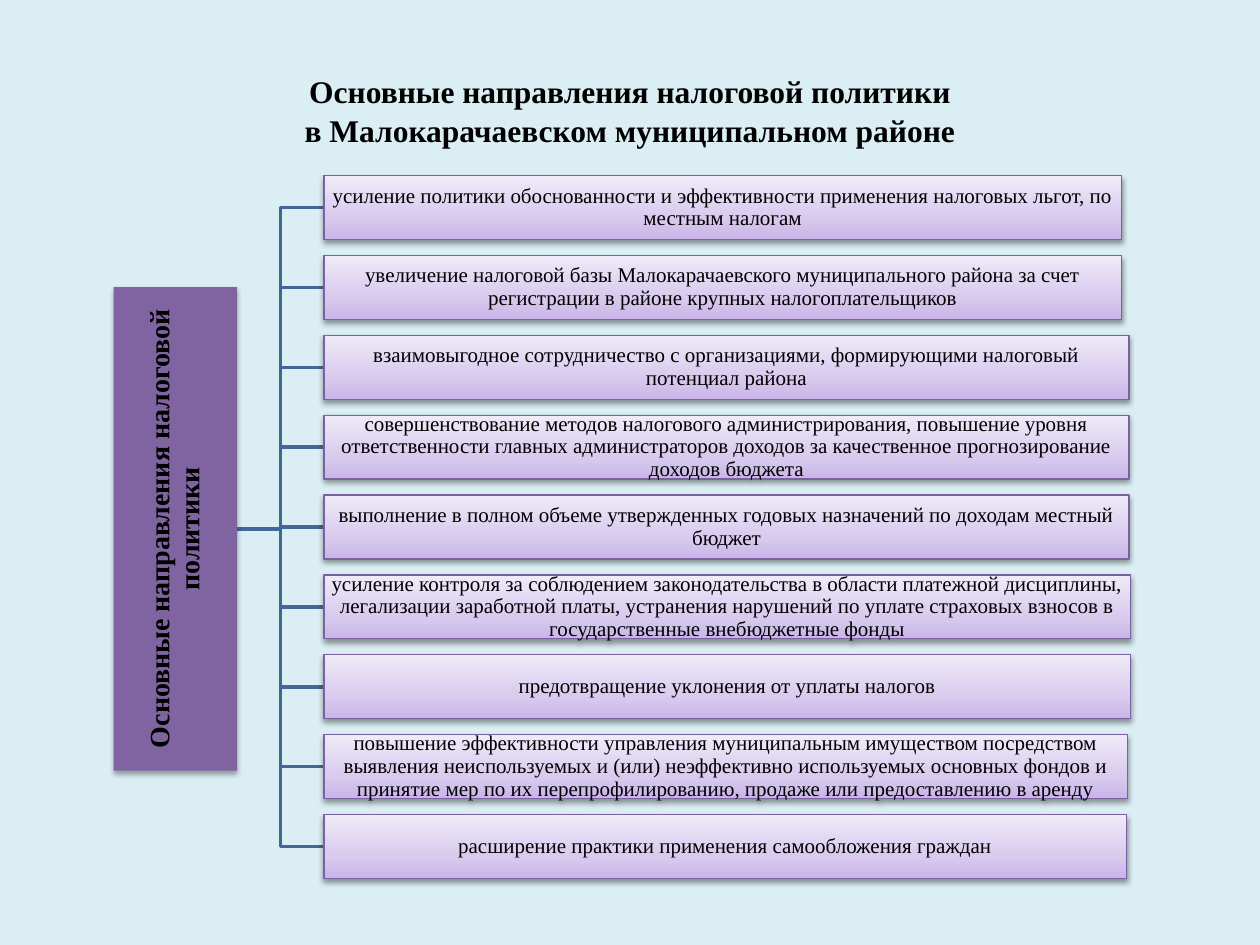
from dataclasses import dataclass

from lxml import etree
from pptx import Presentation
from pptx.dml.color import RGBColor
from pptx.enum.shapes import MSO_SHAPE as Kind
from pptx.enum.text import MSO_ANCHOR as Anchor, PP_ALIGN as Align
from pptx.oxml import parse_xml
from pptx.oxml.ns import nsdecls, qn
from pptx.shapes.autoshape import Shape
from pptx.slide import Slide
from pptx.text.text import TextFrame
from pptx.util import Cm, Pt

SKY = RGBColor(0xDB, 0xEE, 0xF4)
BLACK = RGBColor(0, 0, 0)
BLUE = RGBColor(0x3F, 0x67, 0x97)
PURPLE = RGBColor(0x80, 0x64, 0xA2)
EDGE = RGBColor(0x7D, 0x60, 0xA0)
STOPS = (
    (0, RGBColor(0xC9, 0xB5, 0xE8)),
    (35, RGBColor(0xD8, 0xCB, 0xEE)),
    (100, RGBColor(0xF0, 0xEA, 0xF9)),
)
FONT = "Times New Roman"

# Tree measures in centimetres
LEFT, TOP, HIGH, PITCH = 6.53, 3.54, 1.29, 1.61
ROOT_X, ROOT_Y, TRUNK = 4.78, 10.66, 5.66
ROOT_W, ROOT_H = 9.75, 2.49


@dataclass
class Goal:
    width: float
    text: str


TITLE = (
    "Основные направления налоговой политики",
    "в Малокарачаевском муниципальном районе",
)
GOALS = (
    Goal(16.08, "усиление политики обоснованности и эффективности применения "
         "налоговых льгот, по местным налогам"),
    Goal(16.08, "увеличение налоговой базы Малокарачаевского муниципального "
         "района за счет регистрации в районе крупных налогоплательщиков"),
    Goal(16.23, "взаимовыгодное сотрудничество с организациями, формирующими "
         "налоговый потенциал района"),
    Goal(16.23, "совершенствование методов налогового администрирования, "
         "повышение уровня ответственности главных администраторов доходов "
         "за качественное прогнозирование доходов бюджета"),
    Goal(16.23, "выполнение в полном объеме утвержденных годовых назначений "
         "по доходам местный бюджет"),
    Goal(16.26, "усиление контроля за соблюдением законодательства в области "
         "платежной дисциплины, легализации заработной платы, устранения "
         "нарушений по уплате страховых взносов в государственные "
         "внебюджетные фонды"),
    Goal(16.26, "предотвращение уклонения от уплаты налогов"),
    Goal(16.2, "повышение эффективности управления муниципальным имуществом "
         "посредством выявления неиспользуемых и (или) неэффективно "
         "используемых основных фондов и принятие мер по их "
         "перепрофилированию, продаже или предоставлению в аренду"),
    Goal(16.18, "расширение практики применения самообложения граждан"),
)


def write(frame: TextFrame, lines: tuple[str, ...], size: int,
          bold: bool, space: float) -> None:
    frame.word_wrap = True
    for i, line in enumerate(lines):
        par = frame.paragraphs[0] if i == 0 else frame.add_paragraph()
        par.alignment = Align.CENTER
        par.line_spacing = space
        run = par.add_run()
        run.text = line
        font = run.font
        font.name, font.size, font.bold = FONT, Pt(size), bold
        font.color.rgb = BLACK


def shade(shape: Shape, alpha: int, dist: float) -> None:
    """Cast a soft shadow straight down."""
    shape.shadow.inherit = False
    effects = shape._element.spPr.find(qn("a:effectLst"))
    effects.append(parse_xml(
        f'<a:outerShdw {nsdecls("a")} blurRad="{Pt(3.1)}" dist="{Pt(dist)}" '
        f'dir="5400000" rotWithShape="0"><a:srgbClr val="{BLACK}">'
        f'<a:alpha val="{alpha * 1000}"/></a:srgbClr></a:outerShdw>'))


def blend(shape: Shape) -> None:
    """Fill with the three stops, from bottom to top."""
    shape.fill.gradient()
    grad = shape._element.spPr.find(qn("a:gradFill"))
    stops = grad.find(qn("a:gsLst"))
    for old in list(stops):
        stops.remove(old)
    for pos, color in STOPS:
        stop = etree.SubElement(stops, qn("a:gs"), pos=str(pos * 1000))
        etree.SubElement(stop, qn("a:srgbClr"), val=str(color))
    grad.find(qn("a:lin")).set("ang", "16200000")


def add_box(slide: Slide, x: float, y: float, wide: float, high: float,
            text: str, size: int, bold: bool = False) -> Shape:
    box = slide.shapes.add_shape(Kind.RECTANGLE, Cm(x), Cm(y), Cm(wide), Cm(high))
    frame = box.text_frame
    frame.margin_left = frame.margin_right = Cm(0.02)
    frame.margin_top = frame.margin_bottom = Cm(0.02)
    frame.vertical_anchor = Anchor.MIDDLE
    write(frame, (text,), size, bold, 0.9)
    return box


def add_branch(slide: Slide, y: float) -> None:
    pen = slide.shapes.build_freeform(Cm(ROOT_X), Cm(ROOT_Y))
    bends = ((TRUNK, ROOT_Y), (TRUNK, y), (LEFT, y))
    pen.add_line_segments([(Cm(a), Cm(b)) for a, b in bends], close=False)
    branch = pen.convert_to_shape()
    branch.shadow.inherit = False
    branch.fill.background()
    branch.line.color.rgb = BLUE
    branch.line.width = Pt(2)


def add_root(slide: Slide) -> None:
    x = ROOT_X - (ROOT_W + ROOT_H) / 2
    root = add_box(slide, x, ROOT_Y - ROOT_H / 2, ROOT_W, ROOT_H, TITLE[0], 16, True)
    root.rotation = 270
    root.fill.solid()
    root.fill.fore_color.rgb = PURPLE
    root.line.fill.background()
    shade(root, 35, 1.8)


def add_goal(slide: Slide, goal: Goal, y: float) -> None:
    box = add_box(slide, LEFT, y, goal.width, HIGH, goal.text, 12)
    blend(box)
    box.line.color.rgb = EDGE
    box.line.width = Pt(0.75)
    shade(box, 38, 1.6)


def main() -> None:
    deck = Presentation()
    deck.slide_width, deck.slide_height = Cm(25.4), Cm(19.05)
    slide = deck.slides.add_slide(deck.slide_layouts[6])
    back = slide.background.fill
    back.solid()
    back.fore_color.rgb = SKY

    title = slide.shapes.add_textbox(Cm(1.27), Cm(1.32), Cm(22.86), Cm(1.9))
    write(title.text_frame, TITLE, 18, True, 1)
    title.text_frame.paragraphs[1].space_before = Pt(1)

    tops = [TOP + i * PITCH for i in range(len(GOALS))]
    for y in reversed(tops):
        add_branch(slide, y + HIGH / 2)
    add_root(slide)
    for goal, y in zip(GOALS, tops):
        add_goal(slide, goal, y)
    deck.save("out.pptx")


if __name__ == "__main__":
    main()
